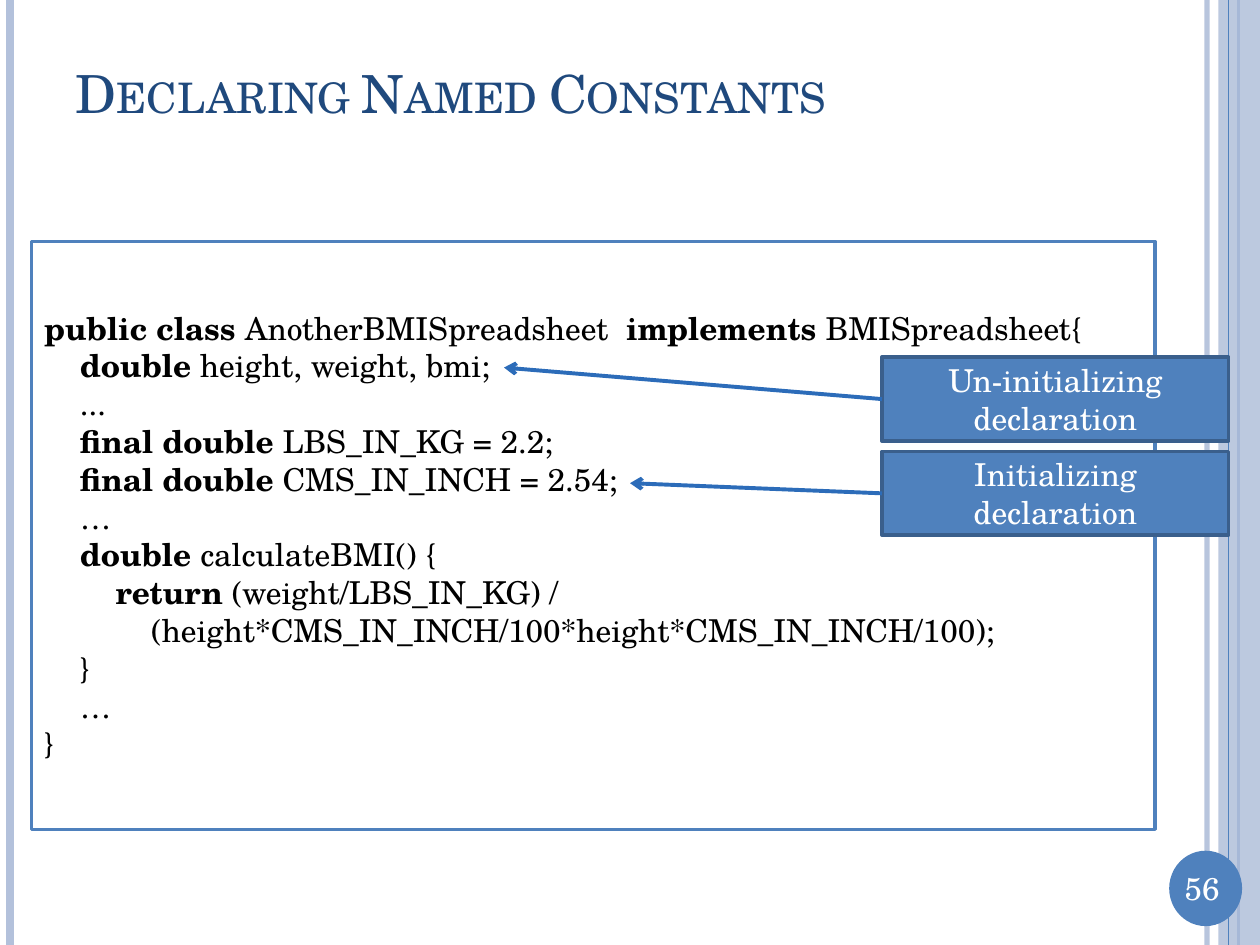
from lxml import etree
from pptx import Presentation, util as u
from pptx.dml.color import RGBColor
from pptx.enum import shapes, text
from pptx.oxml import ns

WHITE = RGBColor(0xFF, 0xFF, 0xFF)
BLACK = RGBColor(0, 0, 0)
NAVY = RGBColor(0x1F, 0x49, 0x7D)
BLUE = RGBColor(0x4F, 0x81, 0xBD)
PALE = RGBColor(0xB3, 0xC1, 0xDB)
EDGE = RGBColor(0x3A, 0x5F, 0x8C)
ARROW = RGBColor(0x2C, 0x6C, 0xB9)
FONT = "TeX Gyre Schola"
WIDTH, HEIGHT = 25.4, 19.05
INDENT = 0.72

TITLE = "Declaring Named Constants"
PAGE_NUMBER = "56"
CODE = [
    (0, [("public class ", True), ("AnotherBMISpreadsheet  ", False),
         ("implements ", True), ("BMISpreadsheet{", False)]),
    (1, [("double", True), (" height, weight, bmi;", False)]),
    (1, [("...", False)]),
    (1, [("final double", True), (" LBS_IN_KG = 2.2;", False)]),
    (1, [("final double", True), (" CMS_IN_INCH = 2.54;", False)]),
    (1, [("…", False)]),
    (1, [("double ", True), ("calculateBMI() {", False)]),
    (2, [("return", True), (" (weight/LBS_IN_KG) /", False)]),
    (3, [("(height*CMS_IN_INCH/100*height*CMS_IN_INCH/100);", False)]),
    (1, [("}", False)]),
    (1, [("…", False)]),
    (0, [("}", False)]),
]
CALLOUTS = [
    ("Un-initializing declaration", 7.2, (10.16, 7.41)),
    ("Initializing declaration", 9.1, (12.7, 9.74)),
]
CALLOUT_LEFT, CALLOUT_WIDTH, CALLOUT_HEIGHT = 17.78, 6.99, 1.69


def add_text(para, words, size=18, color=WHITE, bold=False, align=text.PP_ALIGN.CENTER):
    para.alignment = align
    span = para.add_run()
    span.text = words
    span.font.name = FONT
    span.font.size = u.Pt(size)
    span.font.bold = bold
    span.font.color.rgb = color
    return span


def set_alpha(fill_parent, percent):
    color = fill_parent.find(".//" + ns.qn("a:srgbClr"))
    etree.SubElement(color, ns.qn("a:alpha")).set("val", str(percent * 1000))


def add_box(page, kind, left, top, width, height, fill, line=None):
    box = page.shapes.add_shape(kind, *map(u.Cm, (left, top, width, height)))
    box.shadow.inherit = False
    box.fill.solid()
    box.fill.fore_color.rgb = fill
    if line is None:
        box.line.fill.background()
    else:
        box.line.color.rgb = line
        box.line.width = u.Pt(2)
    box.text_frame.word_wrap = True
    box.text_frame.vertical_anchor = text.MSO_ANCHOR.MIDDLE
    return box


def add_line(page, start, end, color, width, alpha=None, arrow=False):
    line = page.shapes.add_connector(
        shapes.MSO_CONNECTOR.STRAIGHT, *map(u.Cm, (*start, *end)))
    line.line.color.rgb = color
    line.line.width = u.Pt(width)
    properties = line._element.spPr
    if alpha:
        set_alpha(properties, alpha)
    if arrow:
        outline = properties.find(ns.qn("a:ln"))
        etree.SubElement(outline, ns.qn("a:tailEnd")).set("type", "arrow")
    etree.SubElement(properties, ns.qn("a:effectLst"))


def add_stripe(page, x, color, width, alpha=None):
    add_line(page, (x, 0), (x, HEIGHT), color, width, alpha)


def add_frame(page):
    add_stripe(page, 24.33, PALE, 3, alpha=93)
    add_stripe(page, 0.2, PALE, 4.5)
    add_stripe(page, 24.97, BLUE, 1.5)
    band = add_box(page, shapes.MSO_SHAPE.RECTANGLE, 24.56, 0, 0.84, HEIGHT, PALE)
    set_alpha(band._element.spPr, 87)
    add_stripe(page, 24.77, BLUE, 0.75)
    add_box(page, shapes.MSO_SHAPE.OVAL, 23.57, 17.15, 1.47, 1.52, BLUE)
    number = page.shapes.add_textbox(*map(u.Cm, (23.5, 17.4, 1.47, 1.02)))
    number.text_frame.word_wrap = True
    add_text(number.text_frame.paragraphs[0], PAGE_NUMBER)


def add_title(page):
    title = page.shapes.title
    title.left, title.top, title.width, title.height = map(u.Cm, (1.27, 0.76, 22.02, 2.21))
    frame = title.text_frame
    frame.auto_size = text.MSO_AUTO_SIZE.NONE
    frame.vertical_anchor = text.MSO_ANCHOR.MIDDLE
    span = add_text(frame.paragraphs[0], TITLE, size=30, color=NAVY,
                    align=text.PP_ALIGN.LEFT)
    span.font._element.set("cap", "small")


def add_code(page):
    frame = add_box(page, shapes.MSO_SHAPE.RECTANGLE, 0.64, 4.87, 22.65, 11.85,
                    WHITE, BLUE).text_frame
    for index, (level, spans) in enumerate(CODE):
        para = frame.add_paragraph() if index else frame.paragraphs[0]
        para._p.get_or_add_pPr().set("marL", str(u.Cm(level * INDENT)))
        for words, bold in spans:
            add_text(para, words, color=BLACK, bold=bold, align=text.PP_ALIGN.LEFT)


def add_callouts(page):
    for words, top, target in CALLOUTS:
        box = add_box(page, shapes.MSO_SHAPE.RECTANGLE, CALLOUT_LEFT, top,
                      CALLOUT_WIDTH, CALLOUT_HEIGHT, BLUE, EDGE)
        add_text(box.text_frame.paragraphs[0], words)
        add_line(page, (CALLOUT_LEFT, top + CALLOUT_HEIGHT / 2), target,
                 ARROW, 2.25, arrow=True)


def main():
    deck = Presentation()
    deck.slide_width, deck.slide_height = u.Cm(WIDTH), u.Cm(HEIGHT)
    page = deck.slides.add_slide(deck.slide_layouts[5])
    add_frame(page)
    add_title(page)
    add_code(page)
    add_callouts(page)
    deck.save("out.pptx")


if __name__ == "__main__":
    main()
